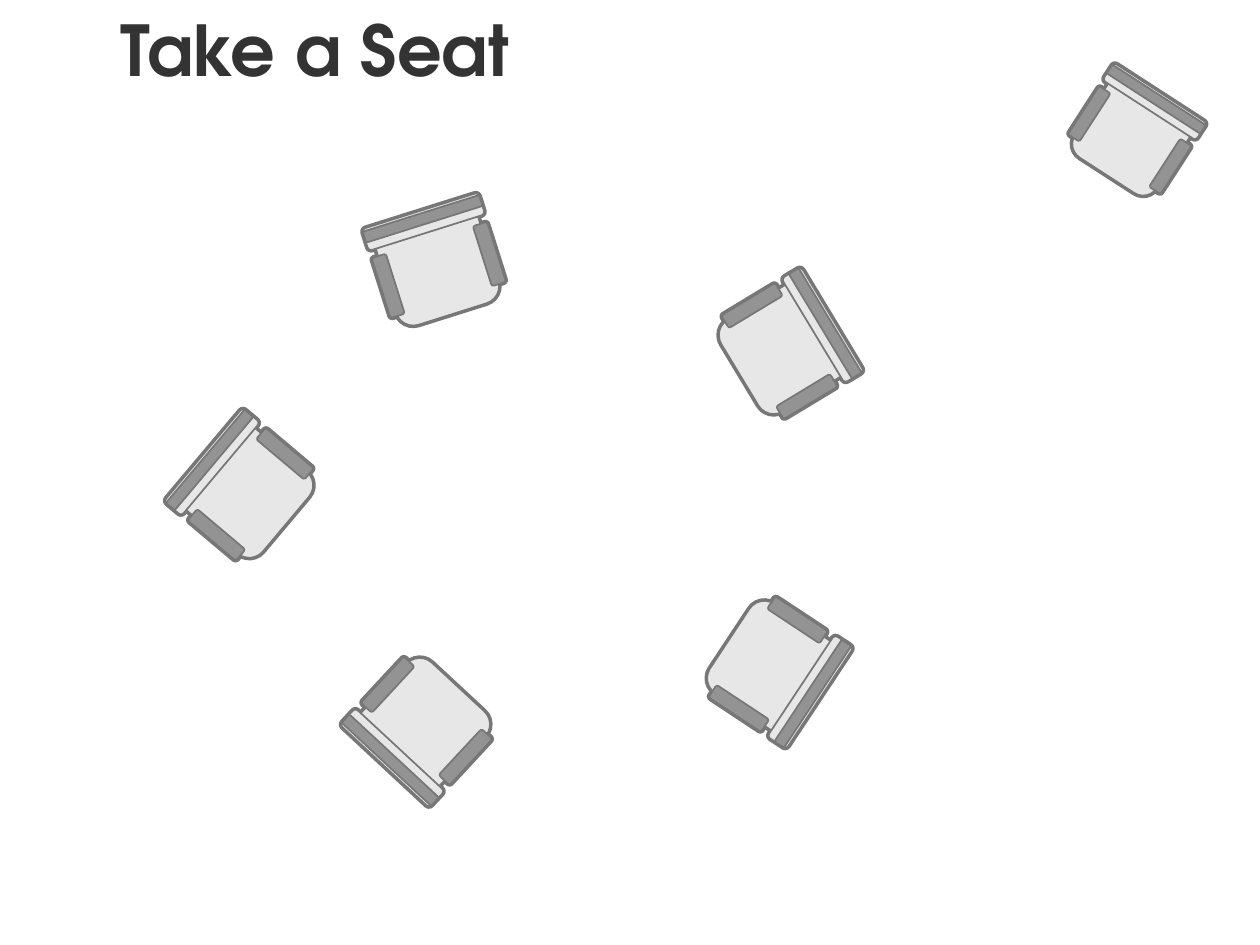
"""Build the "Take a Seat" slide with six armchairs seen from above."""
from math import cos, radians, sin

from pptx import Presentation
from pptx import util as u
from pptx.dml.color import RGBColor
from pptx.enum import shapes, text

COLORS = {"paper": "FFFFFF", "ink": "333333", "edge": "777777",
          "cushion": "E7E7E7", "trim": "939393"}
SHAPE = shapes.MSO_SHAPE


def color(key):
    return RGBColor.from_string(COLORS[key])


def add_block(parent, preset, box, fill):
    block = parent.add_shape(preset, *(u.Cm(length) for length in box))
    block.shadow.inherit = False
    block.fill.solid()
    block.fill.fore_color.rgb = color(fill)
    return block


deck = Presentation()
deck.slide_width, deck.slide_height = u.Cm(25.4), u.Cm(19.05)
slide = deck.slides.add_slide(deck.slide_layouts[6])
slide.background.fill.solid()
slide.background.fill.fore_color.rgb = color("paper")

heading = add_block(slide.shapes, SHAPE.RECTANGLE, (0, 0, 12.7, 1.96), "paper")
heading.line.fill.background()
frame = heading.text_frame
frame_format = {"word_wrap": True, "auto_size": text.MSO_AUTO_SIZE.SHAPE_TO_FIT_TEXT,
                "vertical_anchor": text.MSO_ANCHOR.MIDDLE}
for name, value in frame_format.items():
    setattr(frame, name, value)
line = frame.paragraphs[0]
line.alignment = text.PP_ALIGN.CENTER
words = line.add_run()
words.text = "Take a Seat"
words_format = {"name": "TeX Gyre Adventor", "size": u.Pt(40), "bold": True}
for name, value in words_format.items():
    setattr(words.font, name, value)
words.font.color.rgb = color("ink")

# offset x, offset y from the seat centre, width, height, turn, fill
body = [
    (0, 0, 2.16, 2.16, 0, "cushion"),
    (0, -0.87, 2.46, 0.46, 0, "cushion"),
    (1.07, 0.15, 1.27, 0.3, 90, "trim"),
    (-1.07, 0.15, 1.27, 0.3, 90, "trim"),
]
back_strip = (0, -0.93, 2.46, 0.23, 0, "trim")
layers = [(3, body), (1, body + [back_strip])]

chairs = [
    (8.5, 14.64, 222.9, 1),
    (15.84, 7, 58.9, 1),
    (15.61, 13.47, 123.5, 1),
    (22.85, 2.71, 32.9, 0.91),
    (8.8, 5.3, 342.5, 1),
    (4.94, 9.87, 310.1, 1),
]
for seat_x, seat_y, angle, scale in chairs:
    chair = slide.shapes.add_group_shape()
    cosine, sine = scale * cos(radians(angle)), scale * sin(radians(angle))
    for edge_width, parts in layers:
        for dx, dy, width, height, turn, fill in parts:
            width, height = width * scale, height * scale
            left = seat_x + dx * cosine - dy * sine - width / 2
            top = seat_y + dx * sine + dy * cosine - height / 2
            part = add_block(chair.shapes, SHAPE.ROUNDED_RECTANGLE,
                             (left, top, width, height), fill)
            part.rotation = (angle + turn) % 360
            part.line.width = u.Pt(edge_width)
            part.line.color.rgb = color("edge")

deck.save("out.pptx")
